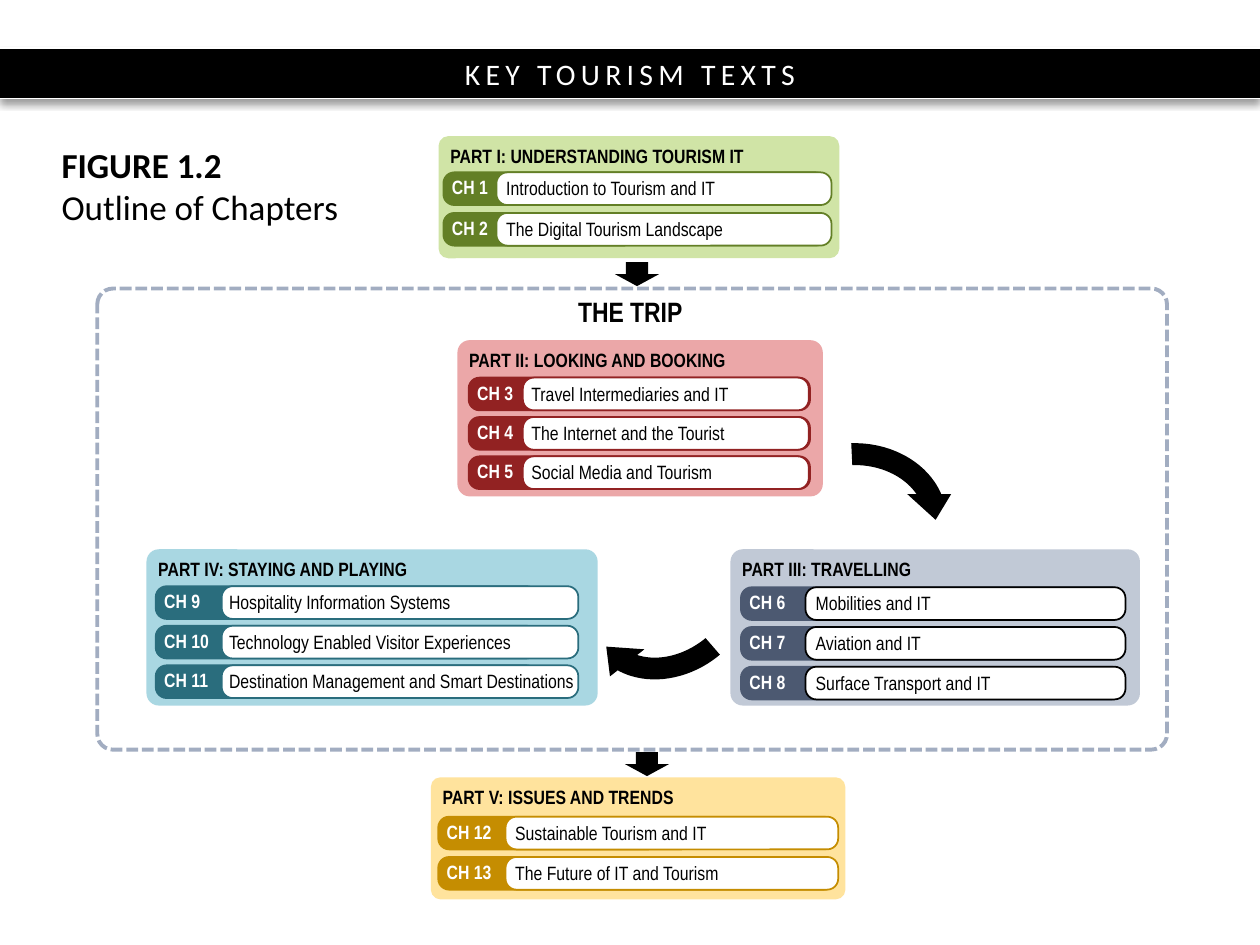
from lxml import etree
from pptx import Presentation
from pptx.dml.color import RGBColor
from pptx.enum.dml import MSO_LINE
from pptx.enum.shapes import MSO_CONNECTOR, MSO_SHAPE as Preset
from pptx.enum.text import MSO_ANCHOR, PP_ALIGN
from pptx.oxml import parse_xml
from pptx.oxml.ns import nsdecls, qn
from pptx.util import Pt

color = RGBColor.from_string


def add_preset(preset, left, top, width, height, fill=None, line=None, weight=1, adjust=()):
    shape = page.shapes.add_shape(preset, Pt(left), Pt(top), Pt(width), Pt(height))
    shape.shadow.inherit = False
    for index, value in enumerate(adjust):
        shape.adjustments[index] = value
    if fill:
        shape.fill.solid()
        shape.fill.fore_color.rgb = color(fill)
    else:
        shape.fill.background()
    if line:
        shape.line.color.rgb = color(line)
        shape.line.width = Pt(weight)
    else:
        shape.line.fill.background()
    return shape


def add_label(text, left, top, width, height=20.9, size=11, bold=False, ink="000000", face="Arial Narrow"):
    box = page.shapes.add_textbox(Pt(left), Pt(top), Pt(width), Pt(height))
    box.text_frame.word_wrap = True
    para = box.text_frame.paragraphs[0]
    para.add_run().text = text
    para.font.name = face
    para.font.size = Pt(size)
    para.font.bold = bold
    para.font.color.rgb = color(ink)
    return para


deck = Presentation()
deck.slide_width, deck.slide_height = Pt(720), Pt(540)
page = deck.slides.add_slide(deck.slide_layouts[6])

band = add_preset(Preset.RECTANGLE, 0, 27.4, 720, 28.8, "000000")
band._element.spPr.find(qn("a:effectLst")).append(parse_xml(
    f'<a:outerShdw {nsdecls("a")} blurRad="50800" dist="38100" dir="5400000" algn="t" rotWithShape="0">'
    '<a:srgbClr val="000000"><a:alpha val="40000"/></a:srgbClr></a:outerShdw>'))
band.text_frame.vertical_anchor = MSO_ANCHOR.MIDDLE
para = band.text_frame.paragraphs[0]
para.alignment = PP_ALIGN.CENTER
span = para.add_run()
span.text = "KEY TOURISM TEXTS"
span._r.get_or_add_rPr().set("spc", "300")
para.font.name = "Calibri"
para.font.size = Pt(17)
para.font.color.rgb = color("FFFFFF")

for edge in (27.4, 56.2):
    rule = page.shapes.add_connector(MSO_CONNECTOR.STRAIGHT, 0, Pt(edge), Pt(720), Pt(edge))
    rule.line.color.rgb = color("FFFFFF")
    rule.line.width = Pt(0.75)
    etree.SubElement(rule._element.spPr, qn("a:effectLst"))

caption = add_label("FIGURE 1.2", 28.1, 78.5, 200, 55.4, size=20, face="Calibri")
caption.runs[0].font.bold = True
caption.add_line_break()
caption.add_run().text = "Outline of Chapters"

trip = add_preset(Preset.ROUNDED_RECTANGLE, 55.6, 164.9, 611.3, 263.5, None, "A2ADC1", 2.25, [0.034])
trip.line.dash_style = MSO_LINE.SQUARE_DOT
add_label("THE TRIP", 323.3, 164.9, 88, 26.6, size=16, bold=True)

for left, top in ((351.4, 149.8), (357.1, 429.8)):
    add_preset(Preset.DOWN_ARROW, left, top, 25.2, 13.7, "000000")

for left, top, turn in ((429.8, 247, 0), (324, 290.9, 141.8)):
    arrow = add_preset(Preset.CIRCULAR_ARROW, left, top, 117.4, 100.1, "000000",
                       adjust=[0.125, 11.423, 204.577, 160.416, 0.125])
    arrow.rotation = turn

panels = [
    ("PART I: UNDERSTANDING TOURISM IT", (250.6, 77.8, 229, 69.8), "D0E4A6", "637F26", "637F26",
     (253.4, 218.9), (283.7, 191.5), 282.2, 98.5, 23.2, 1,
     ["Introduction to Tourism and IT", "The Digital Tourism Landscape"]),
    ("PART II: LOOKING AND BOOKING", (261.4, 194.4, 208.8, 89.3), "EBA7A8", "922222", "922223",
     (267.8, 195.1), (298.8, 163.4), 296.6, 215.8, 22.5, 3,
     ["Travel Intermediaries and IT", "The Internet and the Tourist", "Social Media and Tourism"]),
    ("PART III: TRAVELLING", (417.4, 313.9, 234, 89.3), "C1C9D6", "4C5971", "000000",
     (423.4, 218.2), (460.3, 182.9), 459, 335.6, 22.7, 6,
     ["Mobilities and IT", "Aviation and IT", "Surface Transport and IT"]),
    ("PART IV: STAYING AND PLAYING", (83.7, 313.9, 257.8, 89.3), "A9D7E2", "2A6D7D", "2A6D7D",
     (89, 218.2), (126.7, 203.8), 123.8, 335, 22.6, 9,
     ["Hospitality Information Systems", "Technology Enabled Visitor Experiences",
      "Destination Management and Smart Destinations"]),
    ("PART V: ISSUES AND TRENDS", (246.2, 444.2, 236.9, 69.8), "FFE39D", "C58D01", "C58D01",
     (250.4, 226.8), (288.9, 190.1), 287.3, 466.7, 23, 12,
     ["Sustainable Tourism and IT", "The Future of IT and Tourism"]),
]

for (title, frame, tint, shade, outline, tag, field, text_left,
     first_row, pitch, first_chapter, chapters) in panels:
    add_preset(Preset.ROUNDED_RECTANGLE, *frame, tint, adjust=[0.079])
    add_label(title, frame[0] - 0.4, frame[1] + 0.9, frame[2], bold=True)
    for index, chapter in enumerate(chapters):
        top = first_row + index * pitch
        add_preset(Preset.ROUNDED_RECTANGLE, tag[0], top, tag[1], 18.7, shade, shade, adjust=[0.334])
        add_label(f"CH {first_chapter + index}", tag[0] - 2.2, top - 1.7, 52, bold=True, ink="FFFFFF")
        add_preset(Preset.ROUNDED_RECTANGLE, field[0], top, field[1], 18.7, "FFFFFF", outline, adjust=[0.334])
        add_label(chapter, text_left, top - 1.2, field[1] + 15)

deck.save("out.pptx")
